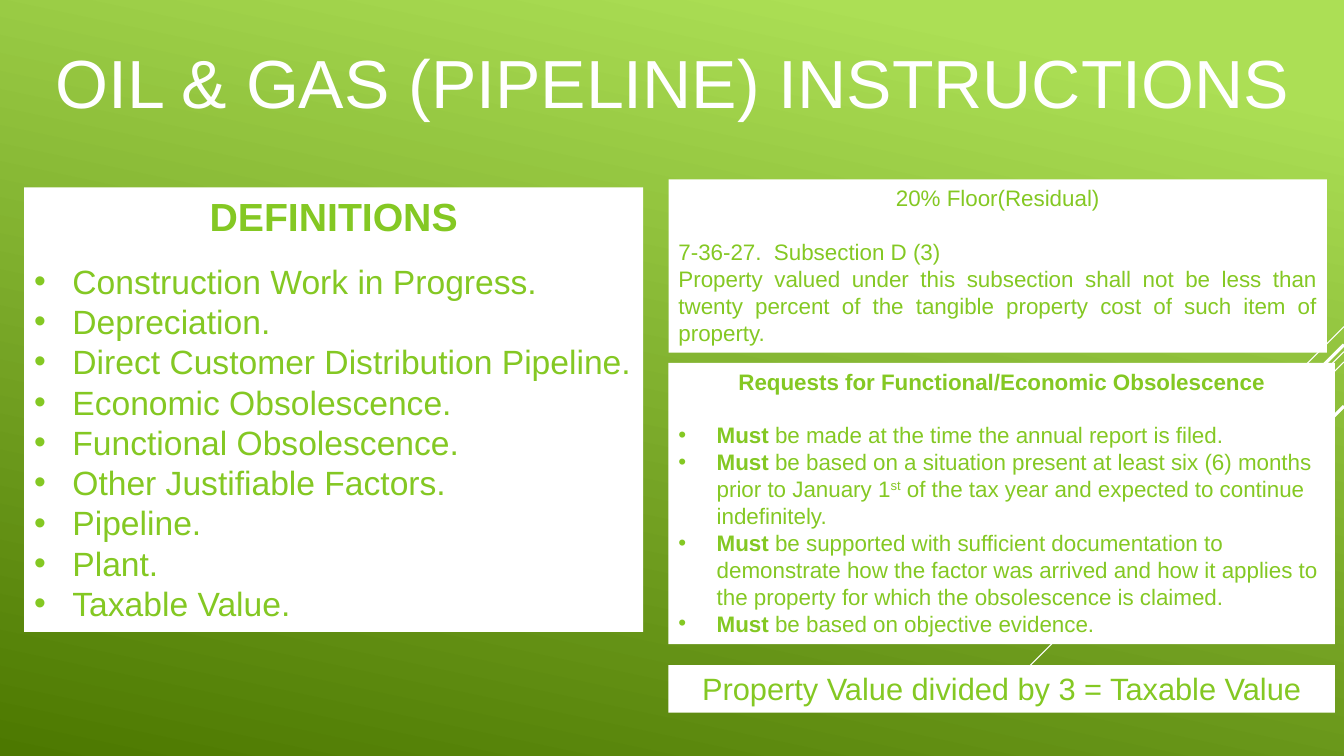
from lxml import etree
from pptx import Presentation
from pptx.dml.color import RGBColor
from pptx.enum.shapes import MSO_CONNECTOR, MSO_SHAPE
from pptx.enum.text import MSO_ANCHOR, PP_ALIGN
from pptx.oxml.ns import qn
from pptx.util import Inches, Pt

LEFT, CENTER, JUSTIFY = PP_ALIGN.LEFT, PP_ALIGN.CENTER, PP_ALIGN.JUSTIFY
TOP, BOTTOM = MSO_ANCHOR.TOP, MSO_ANCHOR.BOTTOM
RECTANGLE, STRAIGHT = MSO_SHAPE.RECTANGLE, MSO_CONNECTOR.STRAIGHT

COLORS = {"light": "ACDF55", "dark": "4C7800", "text": "84C823", "white": "FFFFFF"}
FONT = "Arial"
LINE_HEIGHT = 1.2

# The slide is divided into 100 columns and 100 rows
WIDTH, HEIGHT = Inches(13.33), Inches(7.5)
COLUMN, ROW = WIDTH / 100, HEIGHT / 100
LEFT_MARGIN, RIGHT_PANELS = 1.8, 49.74

# Diagonals: starting row at the right edge, drop in rows, weight in points
DIAGONALS = [
    (43.2, 13.33, 0.75),
    (46.53, 43.47, 0.75),
    (47.87, 27.6, 0.75),
    (45.6, 25.47, 2.25),
    (53.73, 18.53, 2.25),
]

DEFINITIONS = [
    "Construction Work in Progress.",
    "Depreciation.",
    "Direct Customer Distribution Pipeline.",
    "Economic Obsolescence.",
    "Functional Obsolescence.",
    "Other Justifiable Factors.",
    "Pipeline.",
    "Plant.",
    "Taxable Value.",
]

# Each requirement follows a bold "Must "; the second has a raised ordinal
REQUIREMENTS = [
    ["be made at the time the annual report is filed."],
    ["be based on a situation present at least six (6) months prior to January 1",
     "st", " of the tax year and expected to continue indefinitely."],
    ["be supported with sufficient documentation to demonstrate how the factor was "
     "arrived and how it applies to the property for which the obsolescence is claimed."],
    ["be based on objective evidence."],
]


def color(name):
    return RGBColor.from_string(COLORS[name])


def place(column, row, columns, rows):
    return [round(v) for v in (column * COLUMN, row * ROW, columns * COLUMN, rows * ROW)]


def paint_background(slide):
    fill = slide.background.fill
    fill.gradient()
    fill.gradient_angle = 258
    for stop, name, position in zip(fill.gradient_stops, ("light", "dark"), (0.1, 1)):
        stop.color.rgb = color(name)
        stop.position = position


def add_diagonal(slide, start_row, drop, weight):
    top, run = round(start_row * ROW), round(drop * ROW)
    diagonal = slide.shapes.add_connector(STRAIGHT, WIDTH, top, WIDTH - run, top + run)
    diagonal.line.color.rgb = color("white")
    diagonal.line.width = Pt(weight)
    properties = diagonal.line._get_or_add_ln().getparent()
    etree.SubElement(properties, qn("a:effectLst"))


def add_panel(slide, *cells):
    panel = slide.shapes.add_shape(RECTANGLE, *place(*cells))
    panel.shadow.inherit = False
    panel.fill.solid()
    panel.fill.fore_color.rgb = color("white")
    panel.line.fill.background()
    panel.text_frame.word_wrap = True
    panel.text_frame.vertical_anchor = TOP
    return panel.text_frame


def style_run(run, size, bold=False, ink="text"):
    run.font.name = FONT
    run.font.size = Pt(size)
    run.font.bold = bold
    run.font.color.rgb = color(ink)


def add_paragraph(frame, parts, size, align=LEFT, bold=False, after=0):
    """Write one paragraph from a list of texts, into the empty first one if free."""
    first = frame.paragraphs[0]
    paragraph = frame.add_paragraph() if first.runs else first
    paragraph.alignment = align
    paragraph.line_spacing = Pt(size * LINE_HEIGHT)
    paragraph.space_after = Pt(after)
    for part in parts:
        run = paragraph.add_run()
        run.text = part
        style_run(run, size, bold)
    return paragraph


def add_bullet(frame, parts, size):
    paragraph = add_paragraph(frame, parts, size)
    properties = paragraph._p.get_or_add_pPr()
    properties.set("marL", str(Inches(0.38)))
    properties.set("indent", str(-Inches(0.38)))
    etree.SubElement(properties, qn("a:buFont")).set("typeface", FONT)
    etree.SubElement(properties, qn("a:buChar")).set("char", "•")
    return paragraph


def add_title(slide, text):
    frame = slide.shapes.add_textbox(*place(LEFT_MARGIN, 4, 96.55, 12.8)).text_frame
    frame.word_wrap = True
    frame.vertical_anchor = BOTTOM
    frame.text = text
    frame.paragraphs[0].alignment = CENTER
    style_run(frame.paragraphs[0].runs[0], 48.6, ink="white")


def add_definitions(slide):
    frame = add_panel(slide, LEFT_MARGIN, 24.8, 46.06, 58.8)
    add_paragraph(frame, ["DEFINITIONS"], 28, CENTER, bold=True, after=15)
    for definition in DEFINITIONS:
        add_bullet(frame, [definition], 24)


def add_obsolescence(slide):
    frame = add_panel(slide, RIGHT_PANELS, 48, 49.59, 37.2)
    add_paragraph(frame, ["Requests for Functional/Economic Obsolescence"], 16,
                  CENTER, bold=True, after=19.2)
    for requirement in REQUIREMENTS:
        runs = add_bullet(frame, ["Must ", *requirement], 16).runs
        runs[0].font.bold = True
        for run in runs:
            if run.text == "st":
                run.font._element.set("baseline", "30000")


def add_floor(slide):
    frame = add_panel(slide, RIGHT_PANELS, 23.73, 48.99, 22.93)
    add_paragraph(frame, ["20% Floor(Residual)"], 16, CENTER, after=19.2)
    add_paragraph(frame, ["7-36-27.  Subsection D (3)"], 16, JUSTIFY)
    add_paragraph(frame, ["Property valued under this subsection shall not be less than "
                          "twenty percent of the tangible property cost of such item of "
                          "property."], 16, JUSTIFY)


def add_formula(slide):
    frame = add_panel(slide, RIGHT_PANELS, 88, 49.59, 6.27)
    add_paragraph(frame, ["Property Value divided by 3 = Taxable Value"], 22, CENTER)


def main():
    deck = Presentation()
    deck.slide_width, deck.slide_height = WIDTH, HEIGHT
    slide = deck.slides.add_slide(deck.slide_layouts[6])

    # Backdrop
    paint_background(slide)
    for diagonal in DIAGONALS:
        add_diagonal(slide, *diagonal)

    # Content
    add_title(slide, "OIL & GAS (PIPELINE) INSTRUCTIONS")
    add_definitions(slide)
    add_obsolescence(slide)
    add_floor(slide)
    add_formula(slide)

    deck.save("out.pptx")


if __name__ == "__main__":
    main()
